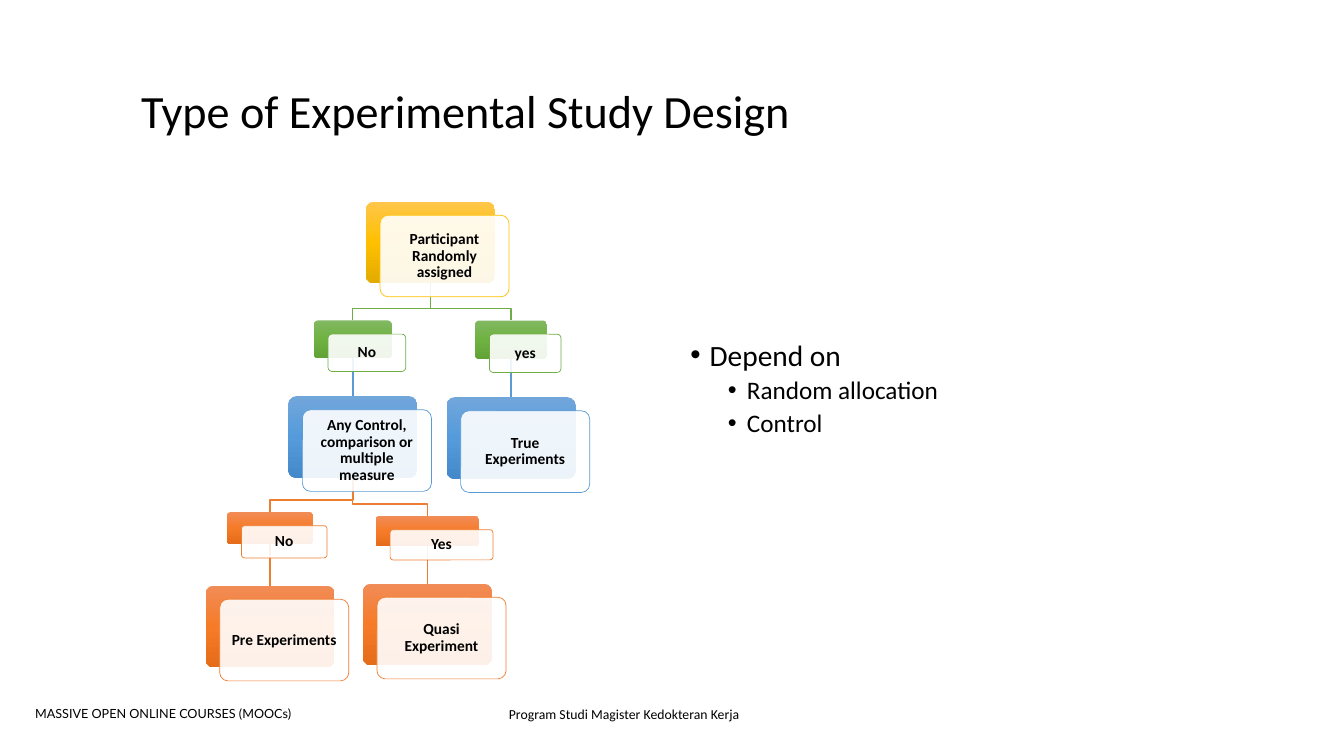
from collections import namedtuple
from copy import deepcopy

from lxml.etree import SubElement
from pptx import Presentation
from pptx.dml.color import RGBColor
from pptx.enum.shapes import MSO_CONNECTOR, MSO_SHAPE
from pptx.enum.text import MSO_ANCHOR, MSO_AUTO_SIZE, PP_ALIGN
from pptx.oxml.ns import qn
from pptx.util import Inches, Pt

Theme = namedtuple("Theme", "font footer_font text card title body sub_body node footer programme")
theme = Theme("Calibri", "Lato", RGBColor(0, 0, 0), RGBColor(255, 255, 255),
              Pt(33), Pt(21), Pt(18), Pt(11), Pt(9), Pt(9.8))
# Each palette: line colour, then the gradient from top to bottom
PALETTES = {
    "gold": ("FFC000", "FFC64B", "FFC000", "E3AB00"),
    "green": ("70AD47", "81B861", "6FB242", "62A336"),
    "blue": ("5B9BD5", "71A6DB", "559BDB", "448ACA"),
    "orange": ("ED7D31", "F18C57", "F67B28", "E56C19"),
}
CELL = Inches(0.1)  # the slide is a grid of square cells
CARD_SHIFT = 1.4, 1.35
BEND = 1.2  # height of the last stretch of a branch
BIG = 12.8, 8.1


def cells(*counts):
    return [int(count * CELL) for count in counts]


def style_font(paragraph, size, name=theme.font, bold=False):
    font = paragraph.font
    font.size, font.name, font.bold = size, name, bold
    font.color.rgb = theme.text


presentation = Presentation()
presentation.slide_width, presentation.slide_height = cells(133.33, 75)
slide = presentation.slides.add_slide(presentation.slide_layouts[1])
shapes = slide.shapes

# Footers
for text, area, size, font_name in [
    ("Program Studi Magister Kedokteran Kerja", (49.5, 69.5, 81.4, 2.7), theme.programme, theme.font),
    ("MASSIVE OPEN ONLINE COURSES (MOOCs)", (2.5, 69.5, 57, 2.5), theme.footer, theme.footer_font),
]:
    frame = shapes.add_textbox(*cells(*area)).text_frame
    frame.word_wrap = True
    frame.text = text
    style_font(frame.paragraphs[0], size, font_name)

# Title
title = shapes.title
title.left, title.top, title.width, title.height = cells(13, 4, 111.2, 14.5)
title.text_frame.text = "Type of Experimental Study Design"
title.text_frame.vertical_anchor = MSO_ANCHOR.MIDDLE
title_paragraph = title.text_frame.paragraphs[0]
title_paragraph.alignment = PP_ALIGN.LEFT
title_paragraph.line_spacing = 0.9
style_font(title_paragraph, theme.title)

# Bullet list
body = slide.placeholders[1]
body.left, body.top, body.width, body.height = cells(67.5, 33.3, 56.7, 34.2)
body.text_frame.auto_size = MSO_AUTO_SIZE.NONE
body.text_frame.text = "Depend on\nRandom allocation\nControl"
for index, paragraph in enumerate(body.text_frame.paragraphs):
    paragraph.level = min(index, 1)
    properties = paragraph._p.get_or_add_pPr()
    properties.set("marL", str(Inches(0.56 if index else 0.19)))
    properties.set("indent", str(Inches(-0.19)))
    SubElement(properties, qn("a:buFont"), typeface="Arial")
    SubElement(properties, qn("a:buChar"), char="•")
    paragraph.line_spacing = 0.9
    paragraph.space_before = Pt(3.8 if index else 0)
    style_font(paragraph, theme.sub_body if index else theme.body)

# Decision tree: name, parent, text, palette, centre, top, (width, height)
Node = namedtuple("Node", "name parent text palette centre top size")
nodes = [Node(*row) for row in [
    ("assigned", None, "Participant Randomly assigned", "gold", 42.7, 20, BIG),
    ("not random", "assigned", "No", "green", 35, 31.8, (7.7, 3.7)),
    ("control", "not random", "Any Control, comparison or multiple measure", "blue", 35, 39.3, BIG),
    ("no control", "control", "No", "orange", 26.8, 50.8, (8.5, 3.2)),
    ("pre", "no control", "Pre Experiments", "orange", 26.8, 58.1, BIG),
    ("has control", "control", "Yes", "orange", 42.4, 51.2, (10.2, 3)),
    ("quasi", "has control", "Quasi Experiment", "orange", 42.4, 57.9, BIG),
    ("random", "assigned", "yes", "green", 50.7, 31.8, (7.1, 3.8)),
    ("true", "random", "True Experiments", "blue", 50.7, 39.4, BIG),
]]
by_name = {node.name: node for node in nodes}

# Coloured blocks
blocks = {}
for node in nodes:
    width, height = node.size
    block = shapes.add_shape(MSO_SHAPE.ROUNDED_RECTANGLE,
                             *cells(node.centre - width / 2, node.top, width, height))
    block.adjustments[0] = 0.1
    block.shadow.inherit = False
    block.line.fill.background()
    block.fill.gradient()
    block.fill.gradient_angle = 270
    first_stop = block.fill.gradient_stops[0]._gs
    first_stop.addnext(deepcopy(first_stop))
    for index, stop in enumerate(block.fill.gradient_stops):
        stop.position = index / 2
        stop.color.rgb = RGBColor.from_string(PALETTES[node.palette][index + 1])
    blocks[node.name] = block

# Branches
for node in nodes:
    if not node.parent:
        continue
    parent = by_name[node.parent]
    start = cells(parent.centre, parent.top + parent.size[1])
    end = cells(node.centre, node.top)
    if node.centre == parent.centre:
        branch = shapes.add_connector(MSO_CONNECTOR.STRAIGHT, *start, *end)
        branch.begin_connect(blocks[node.parent], 2)
        branch.end_connect(blocks[node.name], 0)
    else:
        bend = cells(node.top - BEND)[0]
        builder = shapes.build_freeform(*start)
        builder.add_line_segments([(start[0], bend), (end[0], bend), end], close=False)
        branch = builder.convert_to_shape()
        branch.fill.background()
    branch.line.color.rgb = RGBColor.from_string(PALETTES[node.palette][0])
    branch.line.width = Pt(1)
    SubElement(branch._element.spPr, qn("a:effectLst"))

# Translucent cards with the labels
for node in nodes:
    block = blocks[node.name]
    shift_x, shift_y = cells(*CARD_SHIFT)
    card = shapes.add_shape(MSO_SHAPE.ROUNDED_RECTANGLE, block.left + shift_x,
                            block.top + shift_y, block.width, block.height)
    card.adjustments[0] = 0.1
    card.shadow.inherit = False
    card.fill.solid()
    card.fill.fore_color.rgb = theme.card
    colour = card._element.spPr.find(qn("a:solidFill")).find(qn("a:srgbClr"))
    SubElement(colour, qn("a:alpha"), val="90000")
    card.line.color.rgb = RGBColor.from_string(PALETTES[node.palette][0])
    card.line.width = Pt(0.5)
    frame = card.text_frame
    frame.word_wrap = True
    frame.vertical_anchor = MSO_ANCHOR.MIDDLE
    frame.margin_left = frame.margin_right = Inches(0.07)
    frame.margin_top = frame.margin_bottom = Inches(0.05)
    frame.text = node.text
    label = frame.paragraphs[0]
    label.alignment = PP_ALIGN.CENTER
    label.line_spacing = 0.9
    style_font(label, theme.node, bold=True)

presentation.save("out.pptx")
